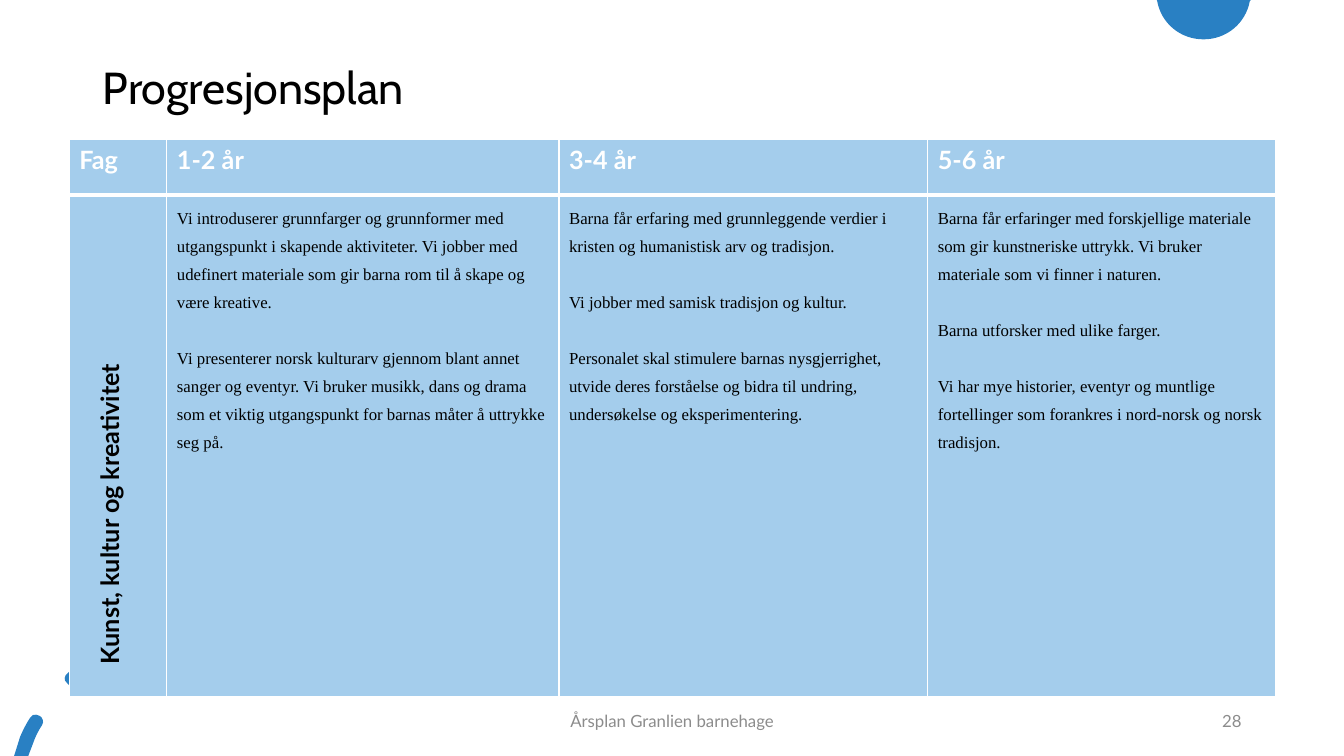
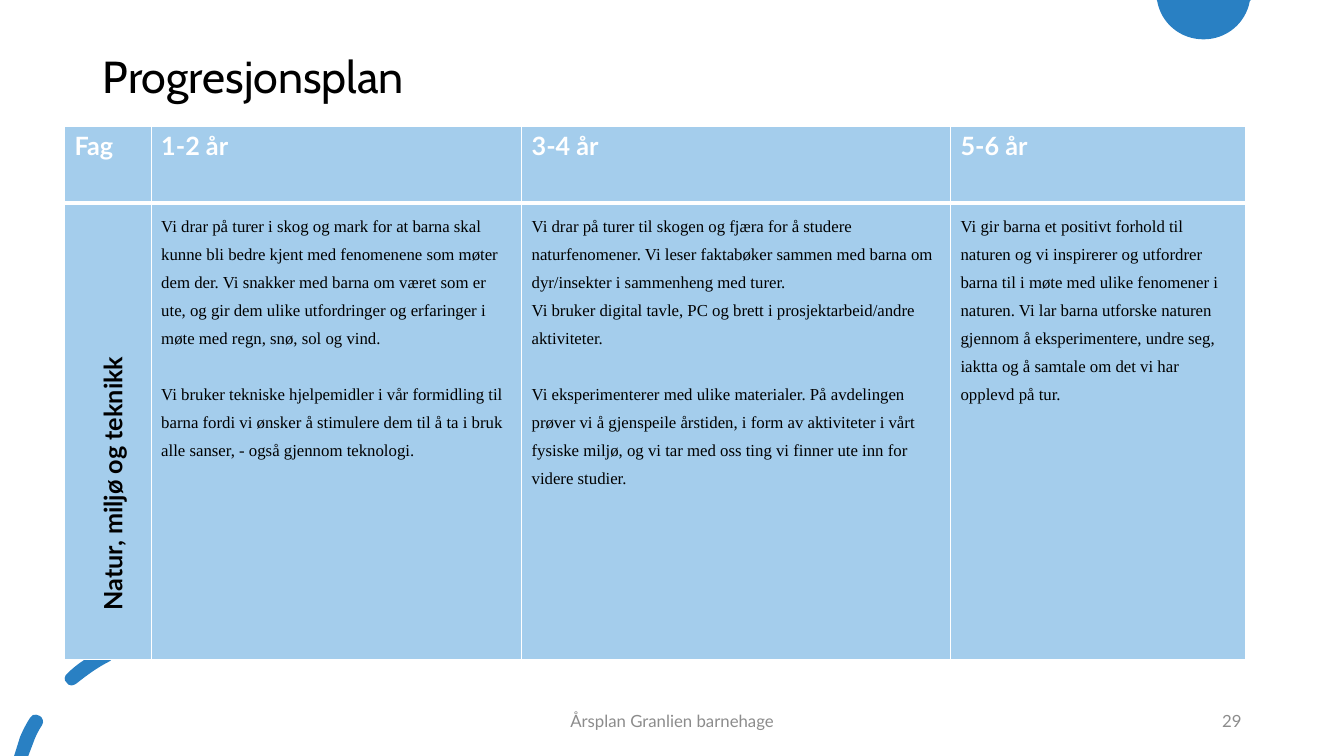
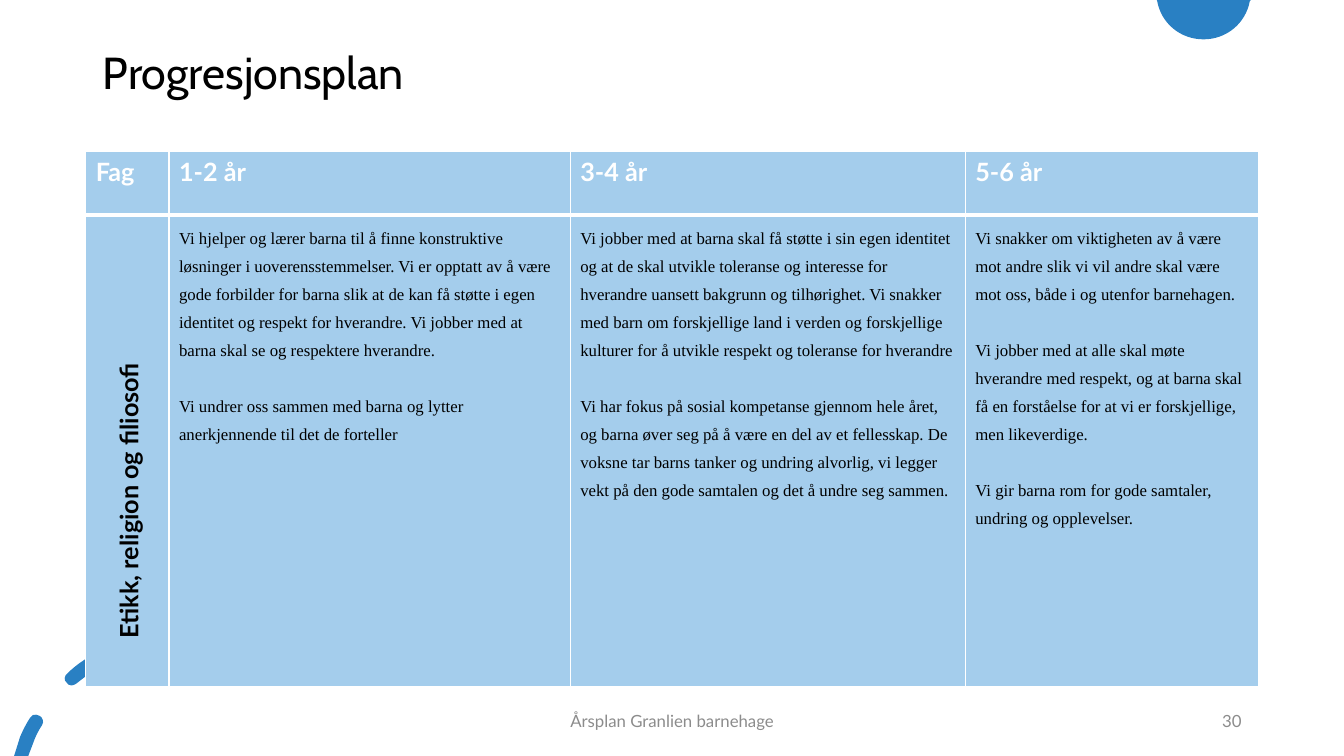
from lxml import etree
from pptx import Presentation
from pptx.dml.color import RGBColor
from pptx.enum.text import MSO_ANCHOR, PP_ALIGN
from pptx.oxml.ns import qn
from pptx.util import Pt

LEFT, CENTER, RIGHT = PP_ALIGN.LEFT, PP_ALIGN.CENTER, PP_ALIGN.RIGHT
TOP, MIDDLE = MSO_ANCHOR.TOP, MSO_ANCHOR.MIDDLE

BLUE = RGBColor(0x29, 0x80, 0xC3)
LIGHT_BLUE = RGBColor(0xA4, 0xCD, 0xEC)
GREY = RGBColor(0x8C, 0x8C, 0x8C)
BLACK = RGBColor(0, 0, 0)
WHITE = RGBColor(0xFF, 0xFF, 0xFF)

TITLE = {"size": Pt(32), "name": "Cabin", "bold": False}
HEADER = {"size": Pt(18), "name": "Lato", "bold": True}
BODY = {"size": Pt(12), "name": "Times New Roman", "bold": False}
FOOTER = {"size": Pt(12), "name": "Lato", "bold": False}

HEADINGS = ("Fag", "1-2 år", "3-4 år", "5-6 år")
FOOTER_TEXT = "Årsplan Granlien barnehage"
FIRST_NUMBER = 28
BLOCK_GAP = Pt(20)
UNITS_PER_POINT = 100

CIRCLE = [
    (826.3, 0), (893.6, 0), (892.8, 0.7),
    (889.9, 16.6, 876.2, 28.1, 859.7, 28.1),
    (843.1, 28.1, 829.4, 16.6, 826.6, 0.7),
]
LOWER_DASH = [
    (25.9, 510.5),
    (24.5, 509.8, 22.3, 511.2, 21.6, 512.6),
    (18.7, 517, 16.6, 521.3, 14.4, 526.3),
    (10.1, 540), (20.2, 540), (23.8, 530.6),
    (25.2, 526.3, 27.4, 522, 30.2, 517.7),
    (31.7, 515.5, 30.2, 511.9, 28.1, 511.2),
    (27.4, 510.5, 26.6, 510.5, 25.9, 510.5),
]
MIDDLE_DASH = [
    (75.6, 463),
    (74.9, 463, 74.2, 463, 74.2, 463.7),
    (64.8, 468, 55.4, 473.8, 48.2, 481),
    (46.1, 482.4, 45.4, 486, 47.5, 487.4),
    (48.2, 488.9, 49.7, 489.6, 51.1, 489.6),
    (52.6, 489.6, 53.3, 488.9, 54.7, 488.2),
    (61.9, 482.4, 69.8, 476.6, 78.5, 472.3),
    (80.6, 470.9, 82.1, 468, 80.6, 465.8),
    (79.9, 463.7, 77.8, 463, 75.6, 463),
]
UPPER_DASH = [
    (128.9, 450),
    (123.8, 450, 118.8, 450.7, 113.8, 451.4),
    (110.9, 451.4, 108.7, 454.3, 109.4, 457.2),
    (109.4, 459.4, 111.6, 461.5, 113.8, 461.5),
    (114.5, 461.5, 114.5, 461.5, 114.5, 461.5),
    (124.6, 460.1, 133.9, 460.1, 143.3, 460.8),
    (146.2, 461.5, 149, 459.4, 149, 457.2),
    (149.8, 454.3, 147.6, 451.4, 144.7, 451.4),
    (139.7, 450.7, 133.9, 450, 128.9, 450),
]

PLANS = [
    {
        "title_height": 71.3,
        "table_at": (49.4, 99.7),
        "cols": (69.8, 280.1, 263.4, 248.4),
        "rows": (39.8, 358.4),
        "subject": "Kunst, kultur og kreativitet",
        "subject_box": (-48.4, 340.6, 252.7, 28.8),
        "cells": [
            ["Vi introduserer grunnfarger og grunnformer med utgangspunkt i skapende aktiviteter. "
             "Vi jobber med udefinert materiale som gir barna rom til å skape og være kreative.",
             "Vi presenterer norsk kulturarv gjennom blant annet sanger og eventyr. Vi bruker musikk, "
             "dans og drama som et viktig utgangspunkt for barnas måter å uttrykke seg på."],
            ["Barna får erfaring med grunnleggende verdier i kristen og humanistisk arv og tradisjon.",
             "Vi jobber med samisk tradisjon og kultur.",
             "Personalet skal stimulere barnas nysgjerrighet, utvide deres forståelse og bidra til "
             "undring, undersøkelse og eksperimentering."],
            ["Barna får erfaringer med forskjellige materiale som gir kunstneriske uttrykk. "
             "Vi bruker materiale som vi finner i naturen.",
             "Barna utforsker med ulike farger.",
             "Vi har mye historier, eventyr og muntlige fortellinger som forankres i nord-norsk "
             "og norsk tradisjon."],
        ],
    },
    {
        "title_height": 55.4,
        "table_at": (46.1, 90),
        "cols": (61.9, 264.6, 306.4, 211),
        "rows": (55.1, 326),
        "subject": "Natur, miljø og teknikk",
        "subject_box": (-39.6, 308.9, 239.8, 28.8),
        "cells": [
            ["Vi drar på turer i skog og mark for at barna skal kunne bli bedre kjent med fenomenene "
             "som møter dem der. Vi snakker med barna om været som er ute, og gir dem ulike "
             "utfordringer og erfaringer i møte med regn, snø, sol og vind.",
             "Vi bruker tekniske hjelpemidler i vår formidling til barna fordi vi ønsker å stimulere "
             "dem til å ta i bruk alle sanser, - også gjennom teknologi."],
            ["Vi drar på turer til skogen og fjæra for å studere naturfenomener. Vi leser faktabøker "
             "sammen med barna om dyr/insekter i sammenheng med turer.\n"
             "Vi bruker digital tavle, PC og brett i prosjektarbeid/andre aktiviteter.",
             "Vi eksperimenterer med ulike materialer. På avdelingen prøver vi å gjenspeile "
             "årstiden, i form av aktiviteter i vårt fysiske miljø, og vi tar med oss ting vi "
             "finner ute inn for videre studier."],
            ["Vi gir barna et positivt forhold til naturen og vi inspirerer og utfordrer barna til i "
             "møte med ulike fenomener i naturen. Vi lar barna utforske naturen gjennom å "
             "eksperimentere, undre seg, iaktta og å samtale om det vi har opplevd på tur."],
        ],
    },
    {
        "title_height": 49.7,
        "table_at": (61.2, 108.2),
        "cols": (59.5, 286.6, 282.2, 209.5),
        "rows": (45.4, 337.2),
        "subject": "Etikk, religion og filiosofi",
        "subject_box": (-47.3, 309.6, 277.9, 28.8),
        "cells": [
            ["Vi hjelper og lærer barna til å finne konstruktive løsninger i uoverensstemmelser. "
             "Vi er opptatt av å være gode forbilder for barna slik at de kan få støtte i egen "
             "identitet og respekt for hverandre. Vi jobber med at barna skal se og respektere "
             "hverandre.",
             "Vi undrer oss sammen med barna og lytter anerkjennende til det de forteller"],
            ["Vi jobber med at barna skal få støtte i sin egen identitet og at de skal utvikle "
             "toleranse og interesse for hverandre uansett bakgrunn og tilhørighet. Vi snakker med "
             "barn om forskjellige land i verden og forskjellige kulturer for å utvikle respekt og "
             "toleranse for hverandre",
             "Vi har fokus på sosial kompetanse gjennom hele året, og barna øver seg på å være en "
             "del av et fellesskap. De voksne tar barns tanker og undring alvorlig, vi legger vekt "
             "på den gode samtalen og det å undre seg sammen."],
            ["Vi snakker om viktigheten av å være mot andre slik vi vil andre skal være mot oss, "
             "både i og utenfor barnehagen.",
             "Vi jobber med at alle skal møte hverandre med respekt, og at barna skal få en "
             "forståelse for at vi er forskjellige, men likeverdige.",
             "Vi gir barna rom for gode samtaler, undring og opplevelser."],
        ],
    },
]


def write(p, text, style, color, align=LEFT, line_spacing=1.0):
    p.alignment = align
    p.line_spacing = line_spacing
    r = p.add_run()
    r.text = text
    for name, value in style.items():
        setattr(r.font, name, value)
    r.font.color.rgb = color


def add_text(s, box, text, style, color, align=LEFT, anchor=MIDDLE):
    sp = s.shapes.add_textbox(*map(Pt, box))
    tf = sp.text_frame
    tf.word_wrap = True
    tf.vertical_anchor = anchor
    write(tf.paragraphs[0], text, style, color, align)
    return sp


def add_title(s, text, height):
    sp = s.shapes.title
    sp.left, sp.top, sp.width, sp.height = map(Pt, (66.2, 28.8, 828, height))
    tf = sp.text_frame
    tf.vertical_anchor = MIDDLE
    write(tf.paragraphs[0], text, TITLE, BLACK, line_spacing=0.9)


def to_units(values):
    return [round(value * UNITS_PER_POINT) for value in values]


def bend_segments(sp, outlines):
    segments = [segment for outline in outlines for segment in outline[1:]]
    start = sp._element.find(".//" + qn("a:moveTo")).find(qn("a:pt"))
    x0, y0 = to_units(outlines[0][0])
    dx, dy = int(start.get("x")) - x0, int(start.get("y")) - y0
    lines = list(sp._element.iter(qn("a:lnTo")))
    for line, segment in zip(lines, segments):
        if len(segment) == 2:
            continue
        curve = etree.Element(qn("a:cubicBezTo"))
        units = to_units(segment)
        for x, y in zip(units[::2], units[1::2]):
            etree.SubElement(curve, qn("a:pt"), x=str(x + dx), y=str(y + dy))
        line.getparent().replace(line, curve)


def add_outline(s, *outlines):
    ends = [[to_units(segment[-2:]) for segment in outline] for outline in outlines]
    builder = s.shapes.build_freeform(*ends[0][0], scale=Pt(1) / UNITS_PER_POINT)
    for i, points in enumerate(ends):
        if i:
            builder.move_to(*points[0])
        builder.add_line_segments(points[1:], close=False)
        builder._add_close()
    sp = builder.convert_to_shape()
    bend_segments(sp, outlines)
    sp.shadow.inherit = False
    sp.fill.solid()
    sp.fill.fore_color.rgb = BLUE
    sp.line.fill.background()


def set_borders(cell, bottom):
    tcPr = cell._tc.get_or_add_tcPr()
    widths = {"lnL": 1, "lnR": 1, "lnT": 1, "lnB": bottom}
    for i, (tag, width) in enumerate(widths.items()):
        ln = etree.Element(qn("a:" + tag), w=str(Pt(width)))
        fill = etree.SubElement(ln, qn("a:solidFill"))
        etree.SubElement(fill, qn("a:srgbClr"), val=str(WHITE))
        tcPr.insert(i, ln)


def fill_body(tf, blocks):
    p = tf.paragraphs[0]
    for i, block in enumerate(blocks):
        for j, text in enumerate(block.split("\n")):
            if i or j:
                p = tf.add_paragraph()
            if i and not j:
                p.space_before = BLOCK_GAP
            write(p, text, BODY, BLACK, line_spacing=1.5)


def add_plan_table(s, plan):
    cols, rows = plan["cols"], plan["rows"]
    box = (*plan["table_at"], sum(cols), sum(rows))
    table = s.shapes.add_table(len(rows), len(cols), *map(Pt, box)).table
    for column, width in zip(table.columns, cols):
        column.width = Pt(width)
    for row, height in zip(table.rows, rows):
        row.height = Pt(height)
    for i, row in enumerate(table.rows):
        for cell in row.cells:
            cell.fill.solid()
            cell.fill.fore_color.rgb = LIGHT_BLUE
            set_borders(cell, 1 if i else 3)
    for i, heading in enumerate(HEADINGS):
        write(table.cell(0, i).text_frame.paragraphs[0], heading, HEADER, WHITE)
    for i, blocks in enumerate(plan["cells"], 1):
        fill_body(table.cell(1, i).text_frame, blocks)


def add_frame(s, number):
    add_outline(s, CIRCLE)
    add_outline(s, LOWER_DASH, MIDDLE_DASH, UPPER_DASH)
    add_text(s, (318.2, 500.4, 324, 28.8), FOOTER_TEXT, FOOTER, GREY, CENTER)
    add_text(s, (678, 500.4, 216, 28.8), str(number), FOOTER, GREY, RIGHT)


def main():
    prs = Presentation()
    prs.slide_width, prs.slide_height = Pt(960), Pt(540)
    for number, plan in enumerate(PLANS, FIRST_NUMBER):
        s = prs.slides.add_slide(prs.slide_layouts[5])
        add_frame(s, number)
        add_title(s, "Progresjonsplan", plan["title_height"])
        add_plan_table(s, plan)
        subject = add_text(s, plan["subject_box"], plan["subject"], HEADER, BLACK, anchor=TOP)
        subject.rotation = 270
    prs.save("out.pptx")


if __name__ == "__main__":
    main()
